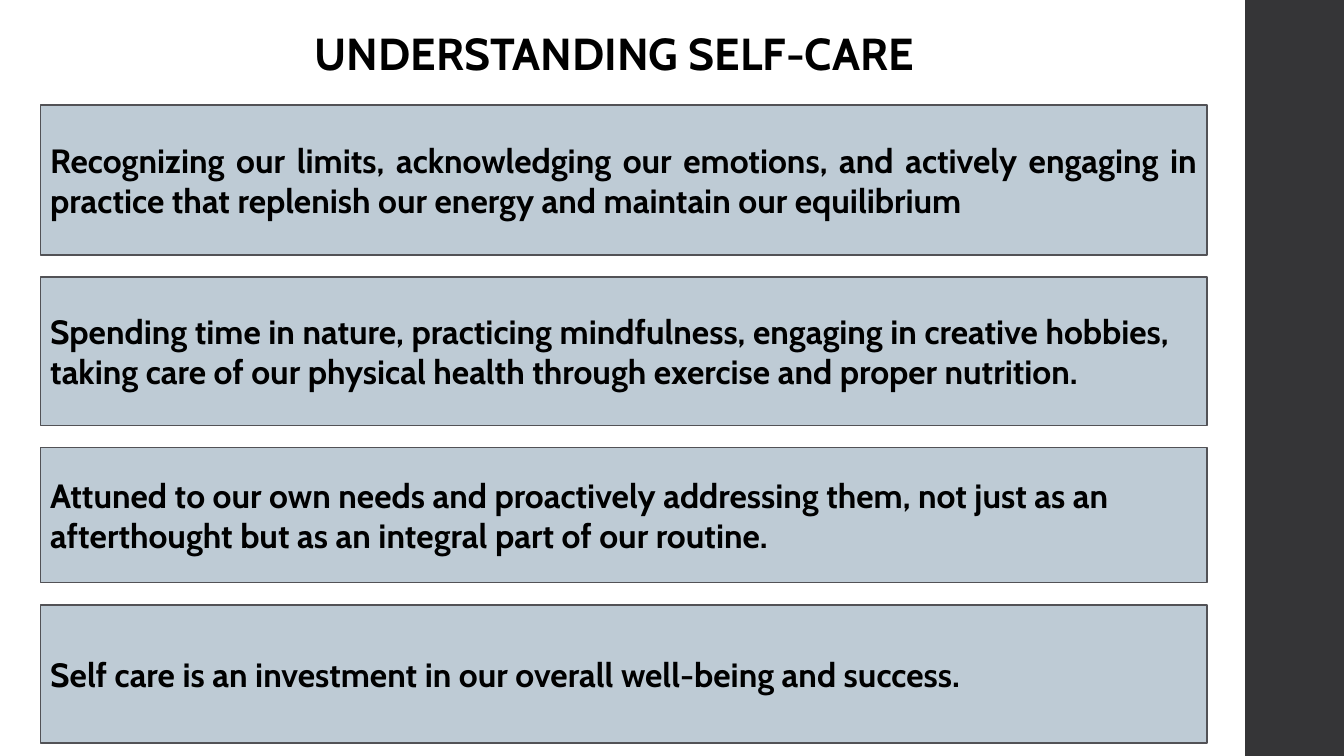
from pptx import Presentation
from pptx.dml.color import RGBColor
from pptx.enum.shapes import MSO_SHAPE
from pptx.enum.text import MSO_ANCHOR, MSO_AUTO_SIZE, PP_ALIGN
from pptx.util import Emu, Pt

RECTANGLE = MSO_SHAPE.RECTANGLE
TOP, MIDDLE = MSO_ANCHOR.TOP, MSO_ANCHOR.MIDDLE
LEFT, JUSTIFY = PP_ALIGN.LEFT, PP_ALIGN.JUSTIFY
FIT_SHAPE = MSO_AUTO_SIZE.SHAPE_TO_FIT_TEXT
EMU_PER_PX = 9144
TITLE_ONLY = 5
FONT = "Cabin"
INK, SIDEBAR, CARD, CARD_EDGE = "000000", "353537", "BECBD5", "525256"
CARD_GAP = 22

HEADING = "UNDERSTANDING SELF-CARE"
STATEMENTS = [
    (149, JUSTIFY, "Recognizing our limits, acknowledging our emotions, and actively "
     "engaging in practice that replenish our energy and maintain our equilibrium"),
    (147, LEFT, "Spending time in nature, practicing mindfulness, engaging in creative "
     "hobbies, taking care of our physical health through exercise and proper nutrition."),
    (134, LEFT, "Attuned to our own needs and proactively addressing them, not just as "
     "an afterthought but as an integral part of our routine."),
    (137, LEFT, "Self care is an investment in our overall well-being and success."),
]


def px(length):
    """Convert px to EMU."""
    return Emu(length * EMU_PER_PX)


def color(hex_code):
    """Turn a hex string into a colour."""
    return RGBColor.from_string(hex_code)


def write(frame, text, size, align, anchor):
    """Write one bold run into a wrapped text frame."""
    frame.word_wrap = True
    frame.vertical_anchor = anchor
    paragraph = frame.paragraphs[0]
    paragraph.alignment = align
    run = paragraph.add_run()
    run.text = text
    run.font.name = FONT
    run.font.size = Pt(size)
    run.font.bold = True
    run.font.color.rgb = color(INK)


def add_panel(slide, box, fill, edge=None):
    """Add a flat rectangle, outlined if an edge colour is given."""
    panel = slide.shapes.add_shape(RECTANGLE, *map(px, box))
    panel.shadow.inherit = False
    panel.fill.solid()
    panel.fill.fore_color.rgb = color(fill)
    if edge:
        panel.line.color.rgb = color(edge)
        panel.line.width = Pt(1.1)
    else:
        panel.line.fill.background()
    return panel


def place_heading(slide, box):
    """Place the slide heading in the title placeholder."""
    heading = slide.shapes.title
    heading.left, heading.top, heading.width, heading.height = map(px, box)
    write(heading.text_frame, HEADING, 32, LEFT, TOP)
    heading.text_frame.auto_size = FIT_SHAPE


def stack_statements(slide, left, top, width):
    """Stack the statement cards downwards with equal gaps."""
    for height, align, statement in STATEMENTS:
        card = add_panel(slide, (left, top, width, height), CARD, CARD_EDGE)
        write(card.text_frame, statement, 24, align, MIDDLE)
        top += height + CARD_GAP


def main():
    """Build and save the slide."""
    deck = Presentation()
    deck.slide_width, deck.slide_height = px(1333), px(750)
    slide = deck.slides.add_slide(deck.slide_layouts[TITLE_ONLY])
    add_panel(slide, (1235, 0, 98, 750), SIDEBAR)
    place_heading(slide, (302, 20, 688, 64))
    stack_statements(slide, 40, 104, 1157)
    deck.save("out.pptx")


if __name__ == "__main__":
    main()
